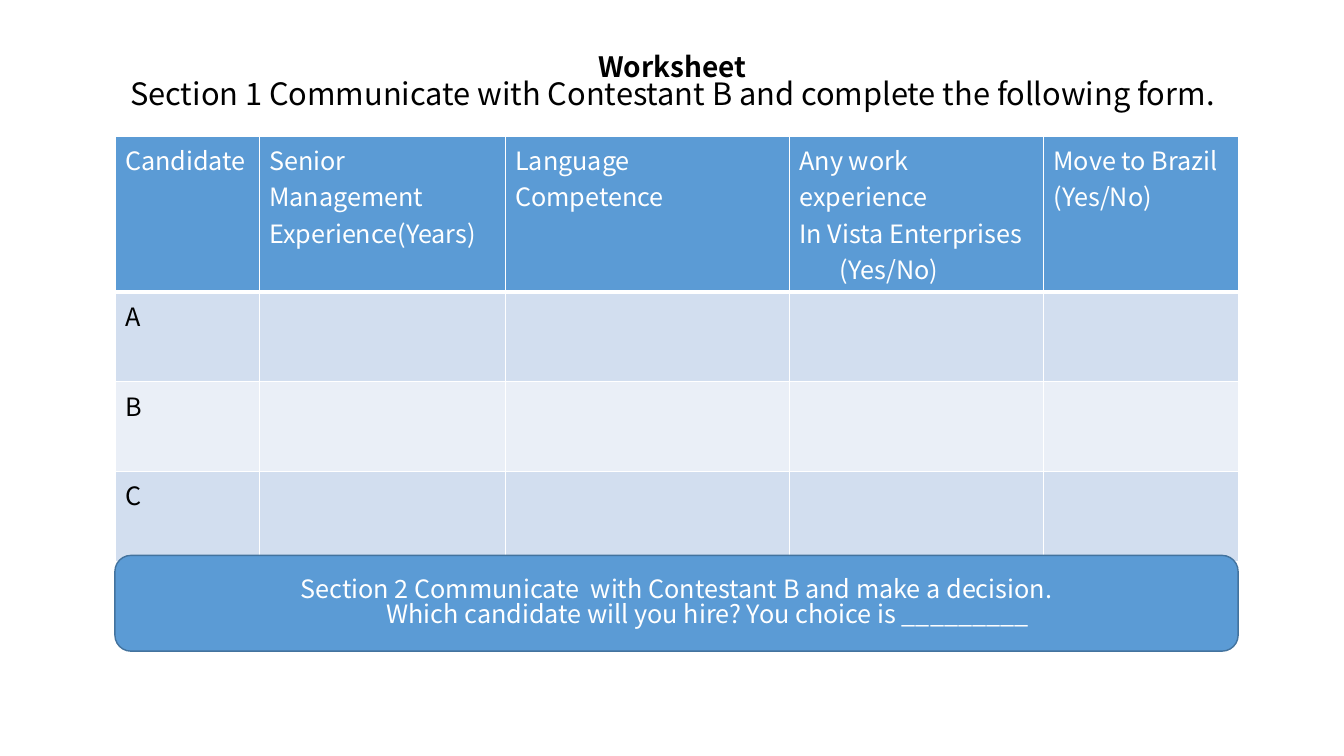
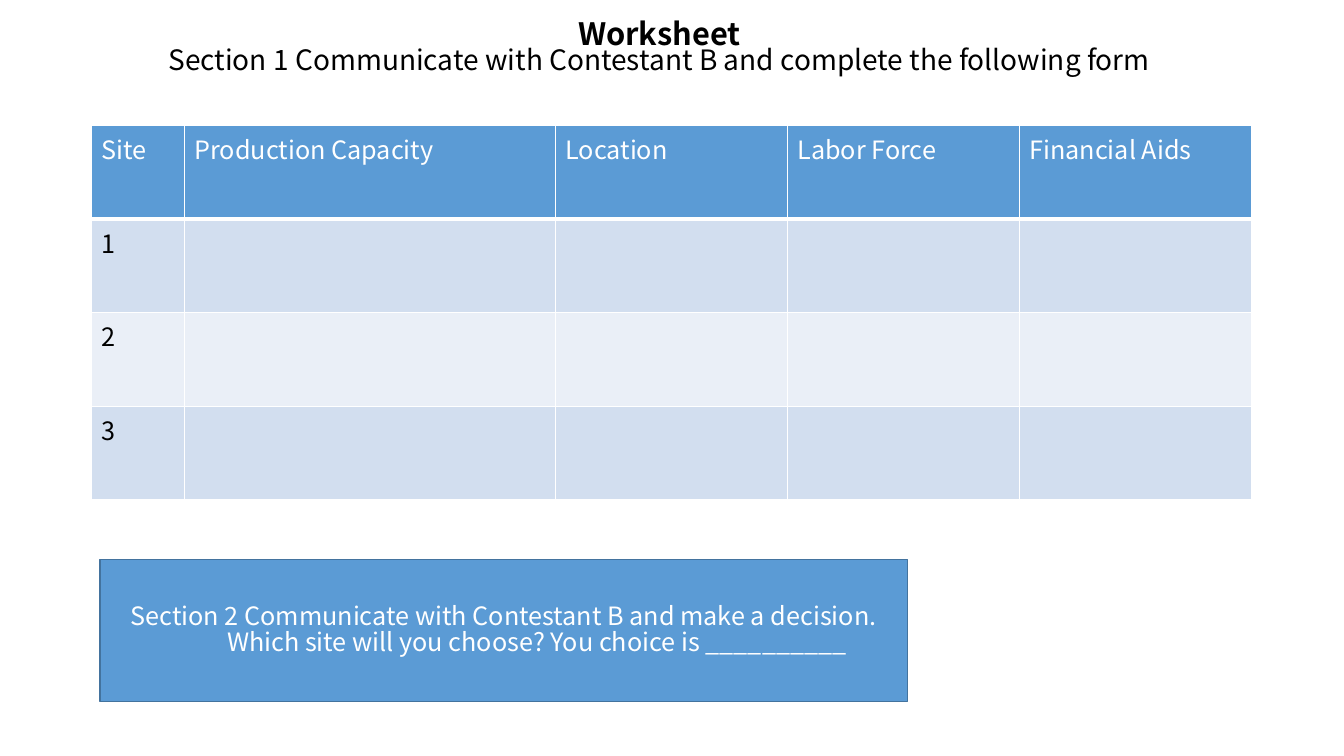
from lxml.etree import SubElement
from pptx import Presentation
from pptx.dml.color import RGBColor
from pptx.enum.shapes import MSO_SHAPE
from pptx.enum.text import MSO_ANCHOR, MSO_AUTO_SIZE, PP_ALIGN
from pptx.oxml.ns import qn
from pptx.util import Pt

# Shared style: 100 px to the inch
PX = 9144
FONT = "Noto Sans CJK SC"
BODY_SIZE = 18
TITLE_SPACING = 0.75
PROMPT_SPACING = 0.85
BLACK = RGBColor(0x00, 0x00, 0x00)
WHITE = RGBColor(0xFF, 0xFF, 0xFF)
BLUE = RGBColor(0x5B, 0x9B, 0xD5)
DARK_BLUE = RGBColor(0x43, 0x73, 0x9E)
BANDS = (RGBColor(0xD2, 0xDE, 0xEF), RGBColor(0xEA, 0xEF, 0xF7))


def write(paragraph, text, size=BODY_SIZE, color=BLACK, bold=False,
          align=PP_ALIGN.LEFT, spacing=None, indent=0):
    """Add a formatted run; indent is the left margin in px."""
    paragraph.alignment = align
    if spacing:
        paragraph.line_spacing = spacing
    if indent:
        properties = paragraph._p.get_or_add_pPr()
        properties.set("marL", str(indent * PX))
        properties.set("indent", "0")
    run = paragraph.add_run()
    run.text = text
    run.font.name = FONT
    run.font.size = Pt(size)
    run.font.bold = bold
    run.font.color.rgb = color


def write_lines(frame, lines, **style):
    """Write one paragraph for each (text, indent) pair."""
    for number, (text, indent) in enumerate(lines):
        paragraph = frame.add_paragraph() if number else frame.paragraphs[0]
        write(paragraph, text, indent=indent, **style)


def set_borders(cell, bottom):
    """Draw white cell borders, with the bottom width in points."""
    properties = cell._tc.get_or_add_tcPr()
    for side, width in (("L", 1), ("R", 1), ("T", 1), ("B", bottom)):
        line = SubElement(properties, qn(f"a:ln{side}"), w=str(Pt(width)))
        fill = SubElement(line, qn("a:solidFill"))
        SubElement(fill, qn("a:srgbClr"), val=str(WHITE))


class Worksheet:
    def __init__(self):
        self.deck = Presentation()
        self.deck.slide_width = 1333 * PX
        self.deck.slide_height = 750 * PX
        self.slide = None

    def add_slide(self):
        self.slide = self.deck.slides.add_slide(self.deck.slide_layouts[5])

    def title(self, box, instruction, heading_size, instruction_size):
        title = self.slide.shapes.title
        title.left, title.top, title.width, title.height = (n * PX for n in box)
        frame = title.text_frame
        frame.auto_size = MSO_AUTO_SIZE.NONE
        frame.word_wrap = True
        frame.vertical_anchor = MSO_ANCHOR.MIDDLE
        paragraph = frame.paragraphs[0]
        style = dict(align=PP_ALIGN.CENTER, spacing=TITLE_SPACING)
        write(paragraph, "Worksheet", size=heading_size, bold=True, **style)
        paragraph.add_line_break()
        write(paragraph, instruction, size=instruction_size, **style)

    def form(self, left, top, widths, heights, headings, candidates):
        table = self.slide.shapes.add_table(
            len(heights), len(widths), left * PX, top * PX,
            sum(widths) * PX, sum(heights) * PX).table
        for column, width in zip(table.columns, widths):
            column.width = width * PX
        for number, (row, height) in enumerate(zip(table.rows, heights)):
            row.height = height * PX
            for cell in row.cells:
                set_borders(cell, bottom=1 if number else 3)
                cell.fill.solid()
                cell.fill.fore_color.rgb = BANDS[(number - 1) % 2] if number else BLUE
        for column, lines in enumerate(headings):
            write_lines(table.cell(0, column).text_frame, lines, color=WHITE)
        for number, name in enumerate(candidates, 1):
            write_lines(table.cell(number, 0).text_frame, [(name, 0)])

    def prompt(self, kind, box, lines):
        panel = self.slide.shapes.add_shape(kind, *(n * PX for n in box))
        panel.shadow.inherit = False
        panel.fill.solid()
        panel.fill.fore_color.rgb = BLUE
        panel.line.color.rgb = DARK_BLUE
        panel.line.width = Pt(1)
        frame = panel.text_frame
        frame.word_wrap = True
        frame.vertical_anchor = MSO_ANCHOR.MIDDLE
        write_lines(frame, lines, color=WHITE, align=PP_ALIGN.CENTER,
                    spacing=PROMPT_SPACING)


def main():
    sheet = Worksheet()

    # Choosing a candidate
    sheet.add_slide()
    sheet.title((92, 40, 1150, 87),
                "Section 1 Communicate with Contestant B and complete the following form.",
                heading_size=20, instruction_size=22)
    sheet.form(114, 135, (143, 244, 282, 252, 194), (154, 89, 89, 89),
               [[("Candidate", 0)],
                [("Senior Management Experience(Years)", 0)],
                [("Language Competence", 0)],
                [("Any work experience", 0), ("In Vista Enterprises", 0), ("(Yes/No)", 40)],
                [("Move to Brazil", 0), ("(Yes/No)", 0)]],
               "ABC")
    sheet.prompt(MSO_SHAPE.ROUNDED_RECTANGLE, (114, 551, 1114, 95),
                 [("Section 2 Communicate  with Contestant B and make a decision.", 0),
                  ("Which candidate will you hire? You choice is _________", 62)])

    # Choosing a site
    sheet.add_slide()
    sheet.title((79, 8, 1150, 82),
                "Section 1 Communicate with Contestant B and complete the following form",
                heading_size=22, instruction_size=20)
    headings = ("Site", "Production Capacity", "Location", "Labor Force", "Financial Aids")
    sheet.form(91, 124, (92, 368, 230, 230, 230), (93,) * 4,
               [[(heading, 0)] for heading in headings], "123")
    sheet.prompt(MSO_SHAPE.RECTANGLE, (99, 555, 801, 141),
                 [("Section 2 Communicate with Contestant B and make a decision.", 0),
                  ("Which site will you choose? You choice is __________", 66)])

    sheet.deck.save("out.pptx")


if __name__ == "__main__":
    main()
